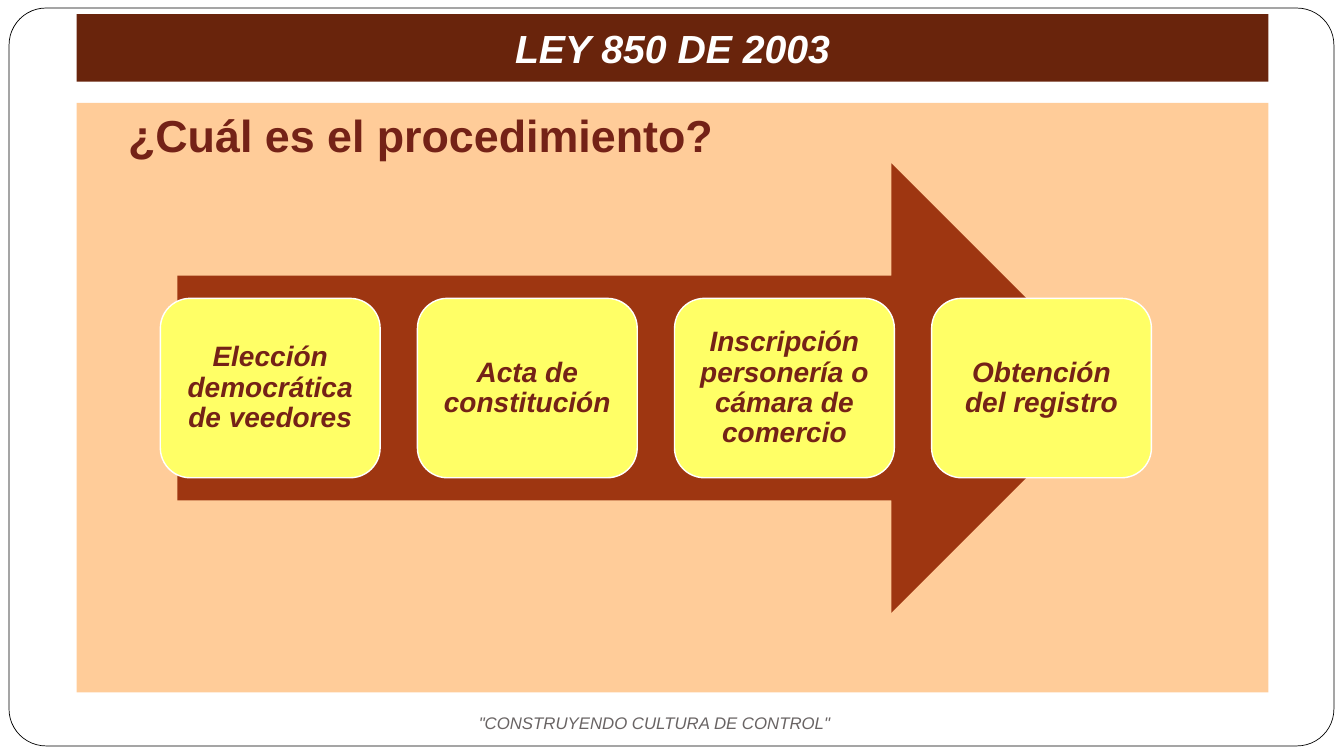
from pptx import Presentation
from pptx.dml.color import RGBColor
from pptx.enum.shapes import MSO_SHAPE
from pptx.enum.text import MSO_ANCHOR, MSO_AUTO_SIZE, PP_ALIGN
from pptx.util import Inches, Pt

WHITE = RGBColor(0xFF, 0xFF, 0xFF)
BLACK = RGBColor(0x00, 0x00, 0x00)
DARK_BROWN = RGBColor(0x69, 0x24, 0x0C)
TEXT_BROWN = RGBColor(0x74, 0x22, 0x17)
RUST = RGBColor(0x9E, 0x36, 0x11)
PEACH = RGBColor(0xFF, 0xCC, 0x99)
YELLOW = RGBColor(0xFF, 0xFF, 0x66)
GRAY = RGBColor(0x69, 0x64, 0x64)

STEPS = [
    "Elección democrática de veedores",
    "Acta de constitución",
    "Inscripción personería o cámara de comercio",
    "Obtención del registro",
]

presentation = Presentation()
presentation.slide_width = Inches(13.33)
presentation.slide_height = Inches(7.5)
slide = presentation.slides.add_slide(presentation.slide_layouts[5])


def add_box(kind, left, top, width, height, fill, line=None, line_width=1):
    shape = slide.shapes.add_shape(
        kind, Inches(left), Inches(top), Inches(width), Inches(height)
    )
    shape.shadow.inherit = False
    shape.fill.solid()
    shape.fill.fore_color.rgb = fill
    if line is None:
        shape.line.fill.background()
    else:
        shape.line.color.rgb = line
        shape.line.width = Pt(line_width)
    return shape


def write(shape, text, size, color, bold=True, italic=True, align=PP_ALIGN.CENTER,
          anchor=MSO_ANCHOR.MIDDLE, insets=(0.1, 0.05, 0.1, 0.05), spacing=1.0):
    frame = shape.text_frame
    frame.word_wrap = True
    frame.auto_size = MSO_AUTO_SIZE.NONE
    frame.vertical_anchor = anchor
    left, top, right, bottom = insets
    frame.margin_left, frame.margin_top = Inches(left), Inches(top)
    frame.margin_right, frame.margin_bottom = Inches(right), Inches(bottom)
    paragraph = frame.paragraphs[0]
    paragraph.alignment = align
    paragraph.line_spacing = spacing
    run = paragraph.add_run()
    run.text = text
    run.font.name = "Arial"
    run.font.size = Pt(size)
    run.font.bold = bold
    run.font.italic = italic
    run.font.color.rgb = color


border = add_box(MSO_SHAPE.ROUNDED_RECTANGLE, 0.09, 0.08, 13.14, 7.32, WHITE, BLACK, 0.5)
border.adjustments[0] = 0.05

title = slide.shapes.title
title.left, title.top = Inches(0.76), Inches(0.14)
title.width, title.height = Inches(11.82), Inches(0.67)
title.fill.solid()
title.fill.fore_color.rgb = DARK_BROWN
write(title, "LEY 850 DE 2003", 28, WHITE, anchor=MSO_ANCHOR.BOTTOM,
      insets=(0.1, 0.05, 0.1, 0.1))
border.element.addnext(title.element)

panel = add_box(MSO_SHAPE.RECTANGLE, 0.76, 1.02, 11.82, 5.85, PEACH)
write(panel, "¿Cuál es el procedimiento?", 32, TEXT_BROWN, italic=False,
      align=PP_ALIGN.LEFT, anchor=MSO_ANCHOR.TOP, insets=(0.51, 0.05, 0.1, 0.05))

add_box(MSO_SHAPE.RIGHT_ARROW, 1.76, 1.62, 9.31, 4.46, RUST)

for index, step in enumerate(STEPS):
    card = add_box(MSO_SHAPE.ROUNDED_RECTANGLE, 1.59 + index * 2.55, 2.96, 2.18, 1.78,
                   YELLOW, WHITE)
    write(card, step, 20, TEXT_BROWN, insets=(0.08, 0.08, 0.08, 0.08), spacing=0.9)

footer = slide.shapes.add_textbox(Inches(4.65), Inches(6.99), Inches(3.99), Inches(0.37))
write(footer, '"CONSTRUYENDO CULTURA DE CONTROL"', 12, GRAY, bold=False,
      align=PP_ALIGN.LEFT)

presentation.save("out.pptx")
